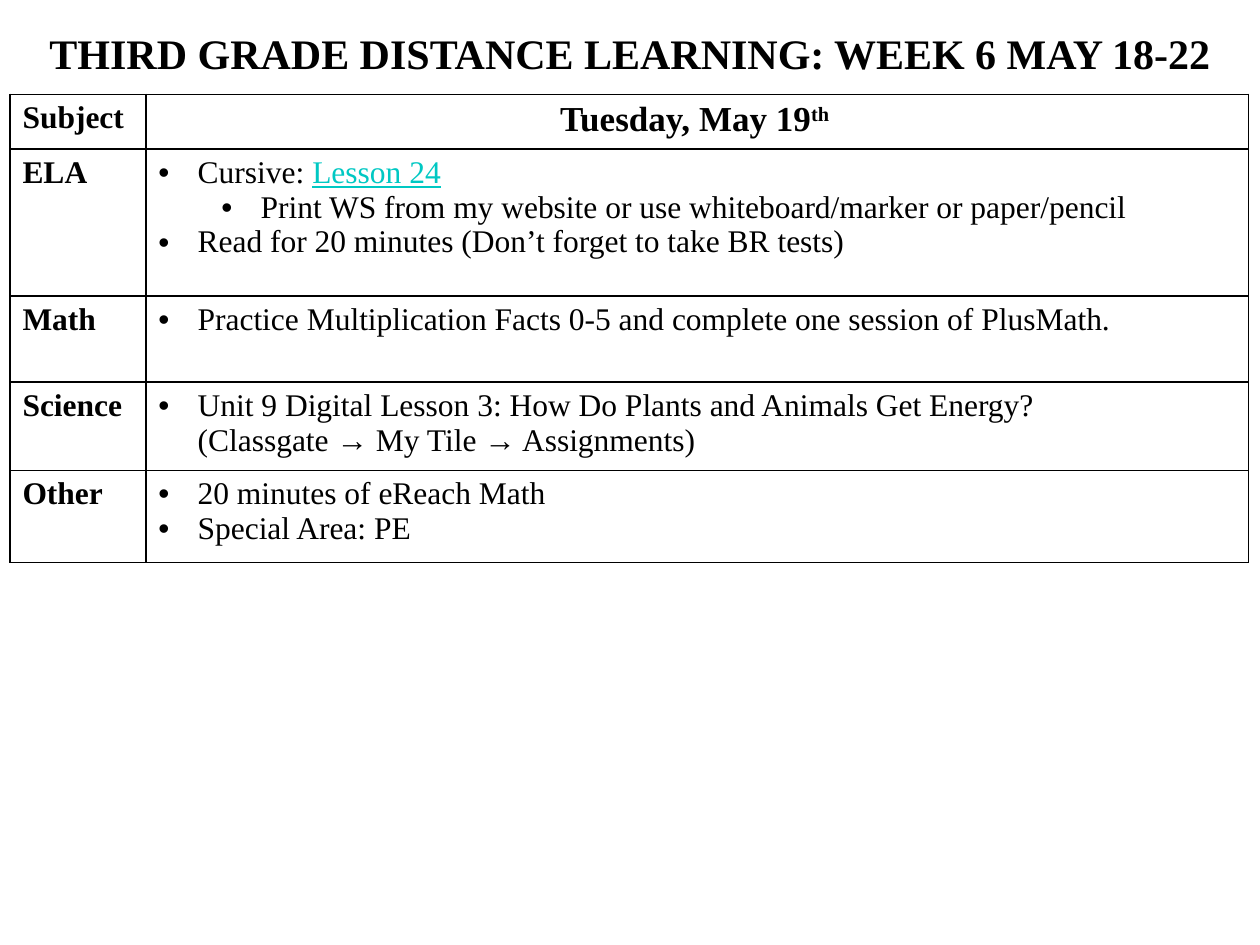
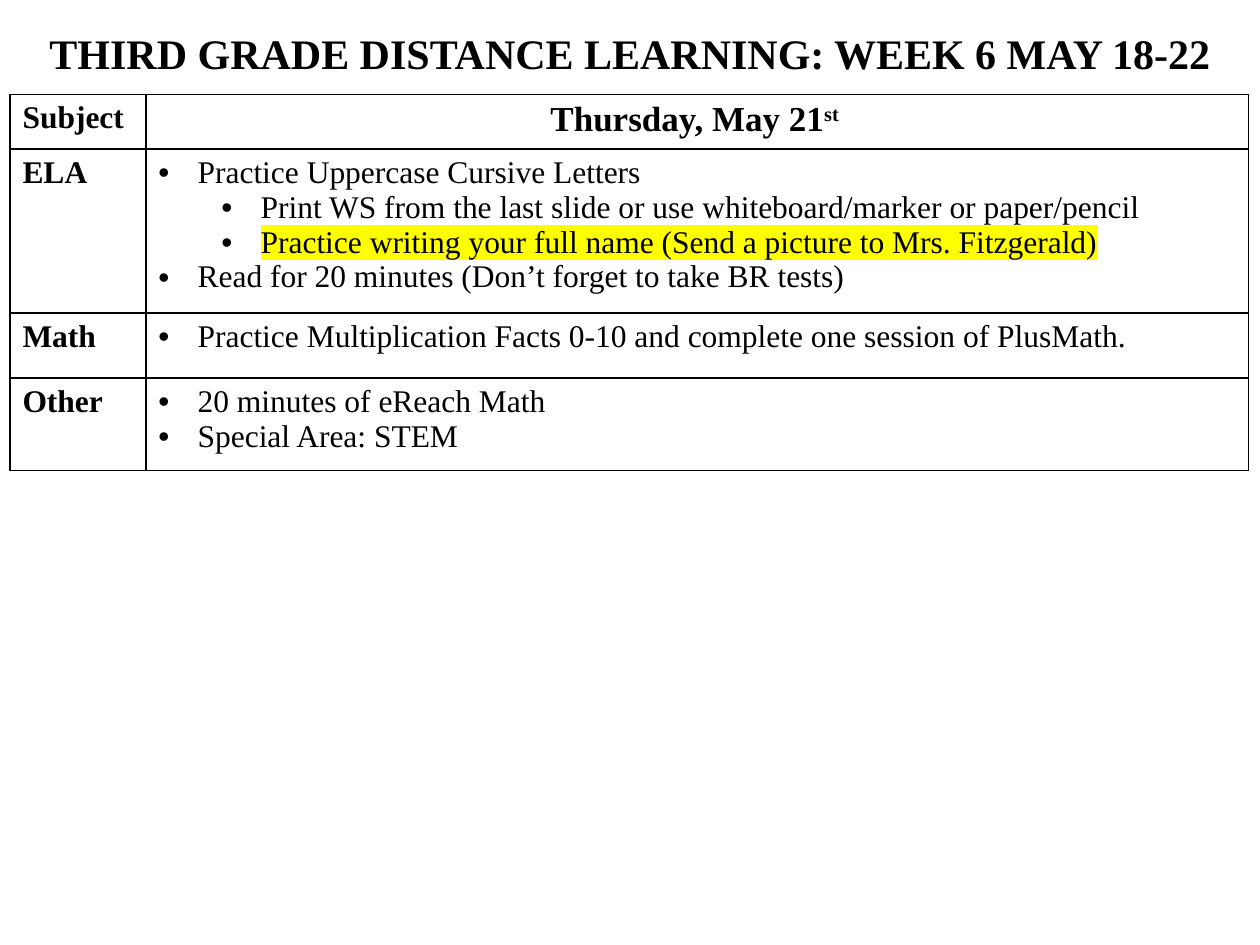
from dataclasses import dataclass

from lxml.etree import SubElement as Sub
from pptx import Presentation
from pptx.dml.color import RGBColor as Rgb
from pptx.enum.text import MSO_AUTO_SIZE as Fit, PP_ALIGN as Align
from pptx.oxml.ns import qn
from pptx.util import Cm, Pt


@dataclass(frozen=True)
class Theme:
    font: str = "Times New Roman"
    ink: str = "000000"
    paper: str = "FFFFFF"
    link: str = "00C8C3"
    mark: str = "FFFF00"
    title: int = 24
    day: int = 20
    body: int = 18
    rule: int = 1


LOOK = Theme()
TITLE = "THIRD GRADE DISTANCE LEARNING: WEEK 6 MAY 18-22"
READ = (0, "Read for 20 minutes (Don’t forget to take BR tests)", "")

# Each plan: day, ordinal, header height and rows of (subject, height, items).
# Each item: level, then pairs of text and style.
HEAD = 1.1
TUESDAY = ("Tuesday, May 19", "th ", [
    ("ELA", 2.97, [
        (0, "Cursive: ", "", "Lesson 24", "link"),
        (1, "Print WS from my website or use whiteboard/marker or paper/pencil", ""),
        READ]),
    ("Math", 1.73, [
        (0, "Practice Multiplication Facts 0-5 and complete one session of PlusMath.", "")]),
    ("Science", 1.78, [
        (0, "Unit 9 Digital Lesson 3: How Do Plants and Animals Get Energy?\v"
            "(Classgate → My Tile → Assignments)", "")]),
    ("Other", 1.86, [
        (0, "20 minutes of eReach Math", ""),
        (0, "Special Area: PE", "")]),
])
THURSDAY = ("Thursday, May 21", "st ", [
    ("ELA", 3.31, [
        (0, "Practice Uppercase Cursive Letters", ""),
        (1, "Print WS from the last slide or use whiteboard/marker or paper/pencil", ""),
        (1, "Practice writing your full name (Send a picture to Mrs. Fitzgerald)", "mark"),
        READ]),
    ("Math", 1.31, [
        (0, "Practice Multiplication Facts 0-10 and complete one session of PlusMath.", "")]),
    ("Other", 1.86, [
        (0, "20 minutes of eReach Math", ""),
        (0, "Special Area: STEM", "")]),
])


def style(run, size, bold=False, color=LOOK.ink):
    font = run.font
    font.name, font.size, font.bold = LOOK.font, Pt(size), bold
    font.color.rgb = Rgb.from_string(color)


def paint(run):
    """Highlight a styled run; the mark must follow its colour."""
    props = run.font._element
    mark = Sub(props, qn("a:highlight"))
    Sub(mark, qn("a:srgbClr"), val=LOOK.mark)
    props.find(qn("a:solidFill")).addnext(mark)


def bullet(para, level):
    para.level = level
    props = para._p.get_or_add_pPr()
    props.set("marL", str(Cm(0.79 + 1.27 * level)))
    props.set("indent", str(Cm(-0.79)))
    Sub(props, qn("a:buFont"), typeface="Arial")
    Sub(props, qn("a:buChar"), char="•")


def frame(cell):
    """Give a cell thin borders and a plain fill."""
    props = cell._tc.get_or_add_tcPr()
    for side in "LRTB":
        line = Sub(props, qn(f"a:ln{side}"), w=str(Pt(LOOK.rule)))
        fill = Sub(line, qn("a:solidFill"))
        Sub(fill, qn("a:srgbClr"), val=LOOK.ink)
    cell.fill.solid()
    cell.fill.fore_color.rgb = Rgb.from_string(LOOK.paper)


def label(cell, text, size=LOOK.body):
    cell.text_frame.text = text
    para = cell.text_frame.paragraphs[0]
    style(para.runs[0], size, bold=True)
    return para


def tasks(cell, items):
    body = cell.text_frame
    for i, (level, *parts) in enumerate(items):
        para = body.paragraphs[0] if i == 0 else body.add_paragraph()
        bullet(para, level)
        para.text = parts[0]
        for text in parts[2::2]:
            para.add_run().text = text
        kinds = parts[1::2]
        for n, run in enumerate(para.runs):
            kind = kinds[min(n, len(kinds) - 1)]
            style(run, LOOK.body, color=LOOK.link if kind == "link" else LOOK.ink)
            if kind == "link":
                run.font.underline = True
            elif kind == "mark":
                paint(run)


def heading(slide, width):
    box = slide.shapes.add_textbox(0, Cm(0.43), width, Cm(1.27))
    body = box.text_frame
    body.word_wrap = True
    body.auto_size = Fit.SHAPE_TO_FIT_TEXT
    label(box, TITLE, LOOK.title).alignment = Align.CENTER


def schedule(slide, day, suffix, rows):
    sizes = [HEAD] + [height for _, height, _ in rows]
    shape = slide.shapes.add_table(len(sizes), 2, Cm(0.2), Cm(1.9),
                                   Cm(24.97), Cm(sum(sizes)))
    table = shape.table
    table.first_row = table.horz_banding = False
    for col, width in zip(table.columns, (2.74, 22.23)):
        col.width = Cm(width)
    for row, height in zip(table.rows, sizes):
        row.height = Cm(height)
    for cell in table.iter_cells():
        frame(cell)

    # Header row, with the ordinal raised
    label(table.cell(0, 0), "Subject")
    para = label(table.cell(0, 1), day, LOOK.day)
    para.alignment = Align.CENTER
    run = para.add_run()
    run.text = suffix
    style(run, LOOK.day, bold=True)
    run.font._element.set("baseline", "30000")

    # Subject rows
    for i, (name, _, items) in enumerate(rows, 1):
        label(table.cell(i, 0), name)
        tasks(table.cell(i, 1), items)


def main():
    deck = Presentation()
    deck.slide_width, deck.slide_height = Cm(25.4), Cm(19.05)
    for plan in (TUESDAY, THURSDAY):
        slide = deck.slides.add_slide(deck.slide_layouts[6])
        schedule(slide, *plan)
        heading(slide, deck.slide_width)
    deck.save("out.pptx")


if __name__ == "__main__":
    main()
